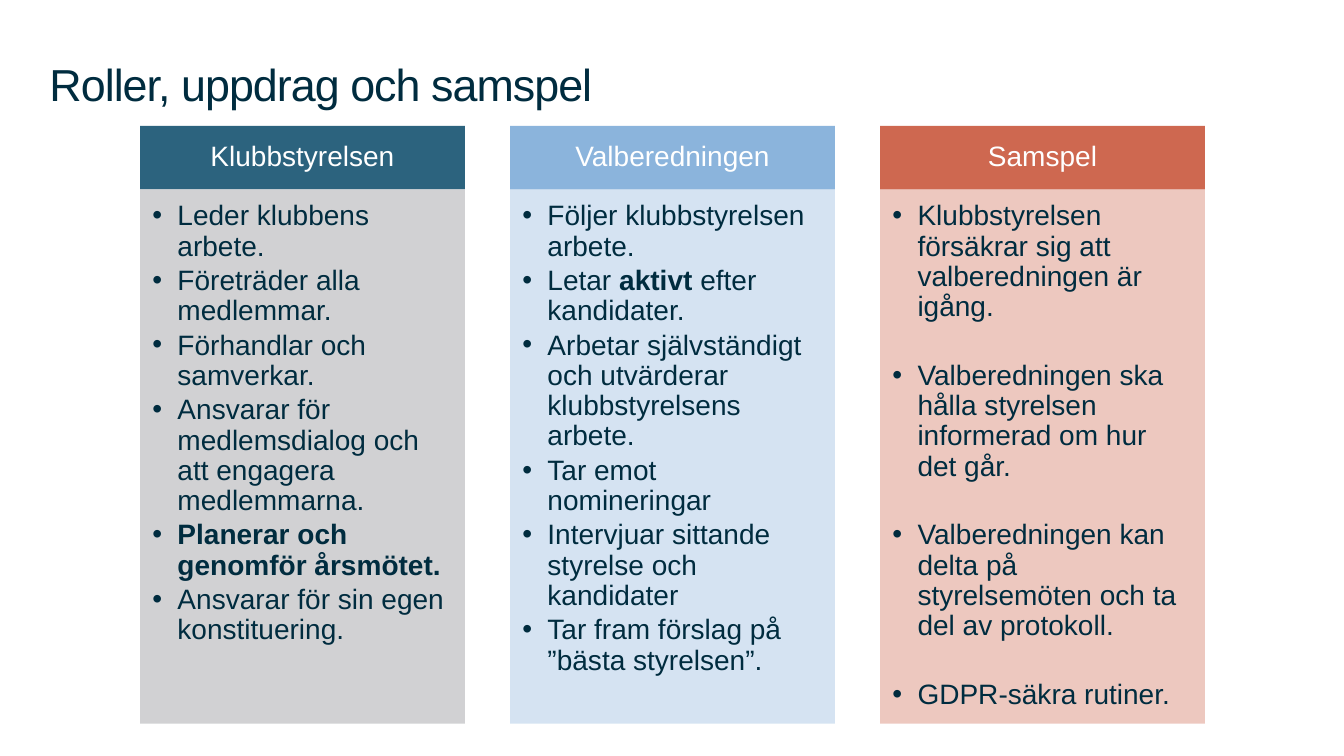
from pptx import Presentation
from pptx.dml.color import RGBColor
from pptx.enum.shapes import MSO_SHAPE
from pptx.enum.text import MSO_ANCHOR, PP_ALIGN
from pptx.oxml.ns import qn
from pptx.util import Pt
from lxml import etree

RECT = MSO_SHAPE.RECTANGLE
TOP, MIDDLE = MSO_ANCHOR.TOP, MSO_ANCHOR.MIDDLE
LEFT, CENTER = PP_ALIGN.LEFT, PP_ALIGN.CENTER
PX = 9144  # 100 px to the inch


class Theme:
    font = "Arial"
    ink, white = "002C3F", "FFFFFF"
    teal, grey, blue, coral = "2C637E", "CCCDCF", "8BB4DC", "CE6850"
    title, body = 32, 20


FIRST, STEP, WIDTH = 139, 367, 322
HEAD_TOP, HEAD_TALL = 125, 63
BODY_TALL = 530
INDENT = 25
SIDES = ("margin_left", "margin_top", "margin_right", "margin_bottom")

# heading, head fill, body fill, body opacity in %, space after in pt, items
COLUMNS = [
    ("Klubbstyrelsen", Theme.teal, Theme.grey, 90, 3, [
        "Leder klubbens arbete.",
        "Företräder alla medlemmar.",
        "Förhandlar och samverkar.",
        "Ansvarar för medlemsdialog och att engagera medlemmarna.",
        "**Planerar och genomför årsmötet.**",
        "Ansvarar för sin egen konstituering.",
    ]),
    ("Valberedningen", Theme.blue, Theme.blue, 36, 3, [
        "Följer klubbstyrelsen arbete.",
        "Letar **aktivt** efter kandidater.",
        "Arbetar självständigt och utvärderar klubbstyrelsens arbete.",
        "Tar emot nomineringar",
        "Intervjuar sittande styrelse och kandidater",
        "Tar fram förslag på ”bästa styrelsen”.",
    ]),
    ("Samspel", Theme.coral, Theme.coral, 36, 27.6, [
        "Klubbstyrelsen försäkrar sig att valberedningen är igång.",
        "Valberedningen ska hålla styrelsen informerad om hur det går.",
        "Valberedningen kan delta på styrelsemöten och ta del av protokoll.",
        "GDPR-säkra rutiner.",
    ]),
]


def assign(target, values):
    for name, value in values.items():
        setattr(target, name, value)


def set_frame(frame, insets, anchor):
    assign(frame, {"word_wrap": True, "vertical_anchor": anchor})
    assign(frame, {side: inset * PX for side, inset in zip(SIDES, insets)})


def add_bullet(para):
    props = para._p.get_or_add_pPr()
    props.set("marL", str(INDENT * PX))
    props.set("indent", str(-INDENT * PX))
    etree.SubElement(props, qn("a:buFont")).set("typeface", Theme.font)
    etree.SubElement(props, qn("a:buChar")).set("char", "•")


def write(para, text, size, color, align=LEFT, after=0):
    """Fill a paragraph; parts between double asterisks are bold."""
    assign(para, {"alignment": align, "line_spacing": 0.9,
                  "space_before": Pt(0), "space_after": Pt(after)})
    for order, part in enumerate(text.split("**")):
        if part:
            run = para.add_run()
            run.text = part
            assign(run.font, {"name": Theme.font, "size": Pt(size),
                              "bold": order % 2 == 1})
            run.font.color.rgb = RGBColor.from_string(color)


def add_panel(slide, box, color, alpha=100):
    panel = slide.shapes.add_shape(RECT, *(side * PX for side in box))
    panel.shadow.inherit = False
    panel.line.fill.background()
    panel.fill.solid()
    panel.fill.fore_color.rgb = RGBColor.from_string(color)
    if alpha < 100:
        tint = panel.fill._xPr.find(qn("a:solidFill"))[0]
        etree.SubElement(tint, qn("a:alpha")).set("val", str(alpha * 1000))
    return panel


def add_title(slide, text):
    box = slide.shapes.add_textbox(*(side * PX for side in (49, 58, 952, 56)))
    set_frame(box.text_frame, (0, 4, 0, 0), TOP)
    para = box.text_frame.paragraphs[0]
    write(para, text, Theme.title, Theme.ink)
    para.runs[0].font._element.set("spc", "-70")


def add_head(slide, left, text, color):
    panel = add_panel(slide, (left, HEAD_TOP, WIDTH, HEAD_TALL), color)
    set_frame(panel.text_frame, (16, 9, 16, 9), MIDDLE)
    write(panel.text_frame.paragraphs[0], text, Theme.body, Theme.white, CENTER)


def add_list(slide, left, items, color, alpha, after):
    top = HEAD_TOP + HEAD_TALL
    panel = add_panel(slide, (left, top, WIDTH, BODY_TALL), color, alpha)
    frame = panel.text_frame
    set_frame(frame, (12, 12, 16, 17), TOP)
    for order, item in enumerate(items):
        para = frame.add_paragraph() if order else frame.paragraphs[0]
        add_bullet(para)
        write(para, item, Theme.body, Theme.ink, after=after)


def main():
    deck = Presentation()
    assign(deck, {"slide_width": 1333 * PX, "slide_height": 750 * PX})
    slide = deck.slides.add_slide(deck.slide_layouts[6])
    add_title(slide, "Roller, uppdrag och samspel")
    for order, column in enumerate(COLUMNS):
        head, dark, light, alpha, after, items = column
        left = FIRST + order * STEP
        add_head(slide, left, head, dark)
        add_list(slide, left, items, light, alpha, after)
    deck.save("out.pptx")


if __name__ == "__main__":
    main()
